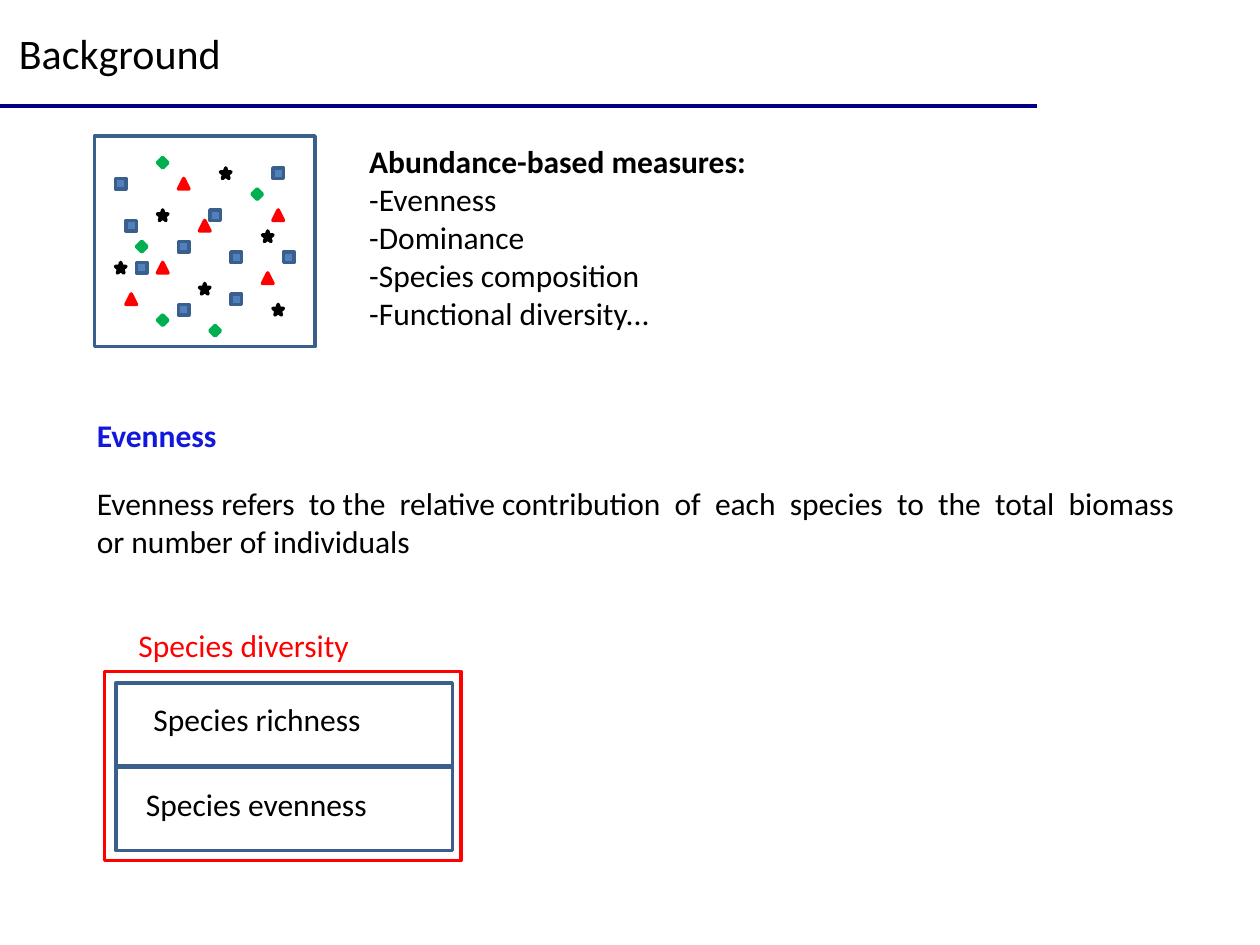
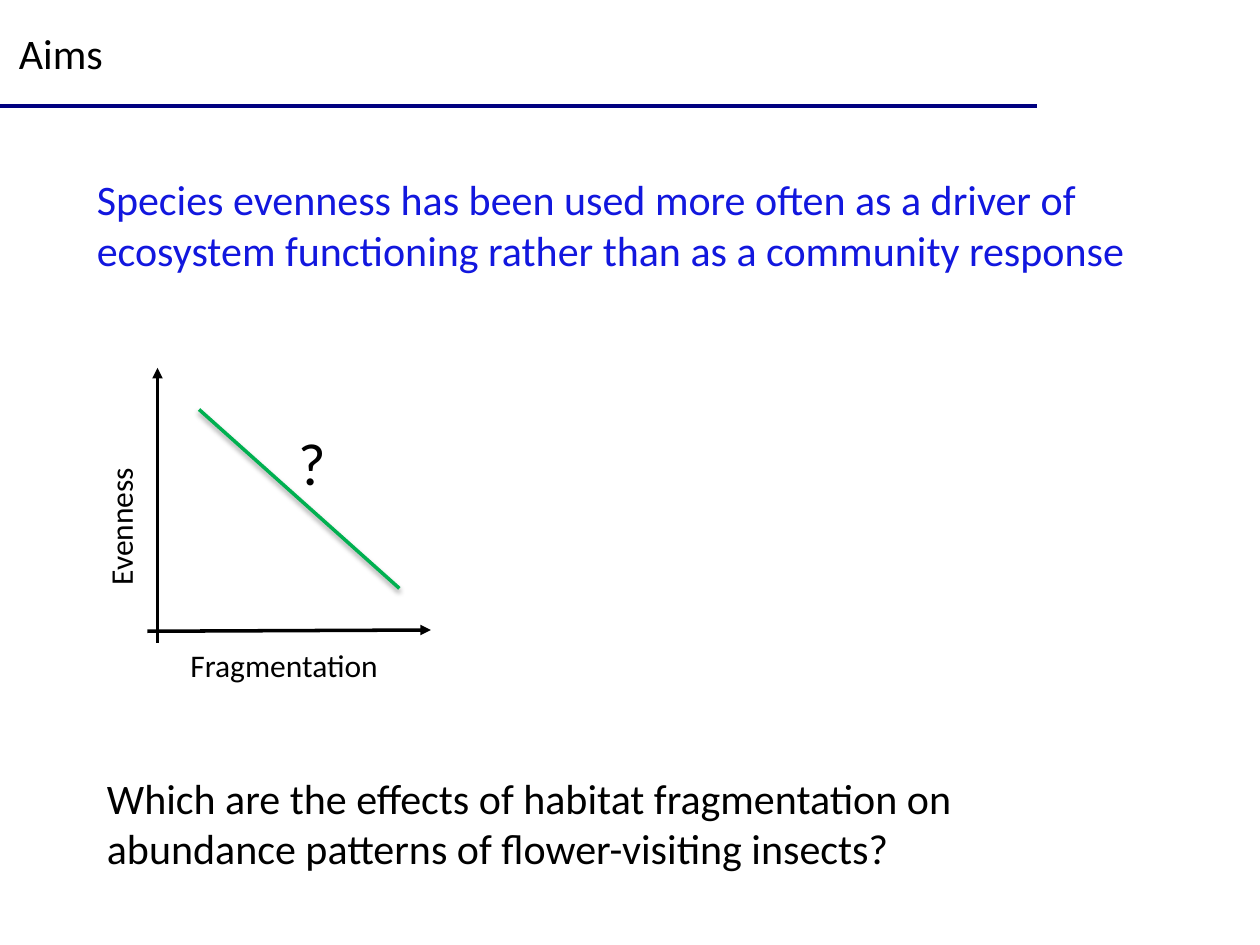
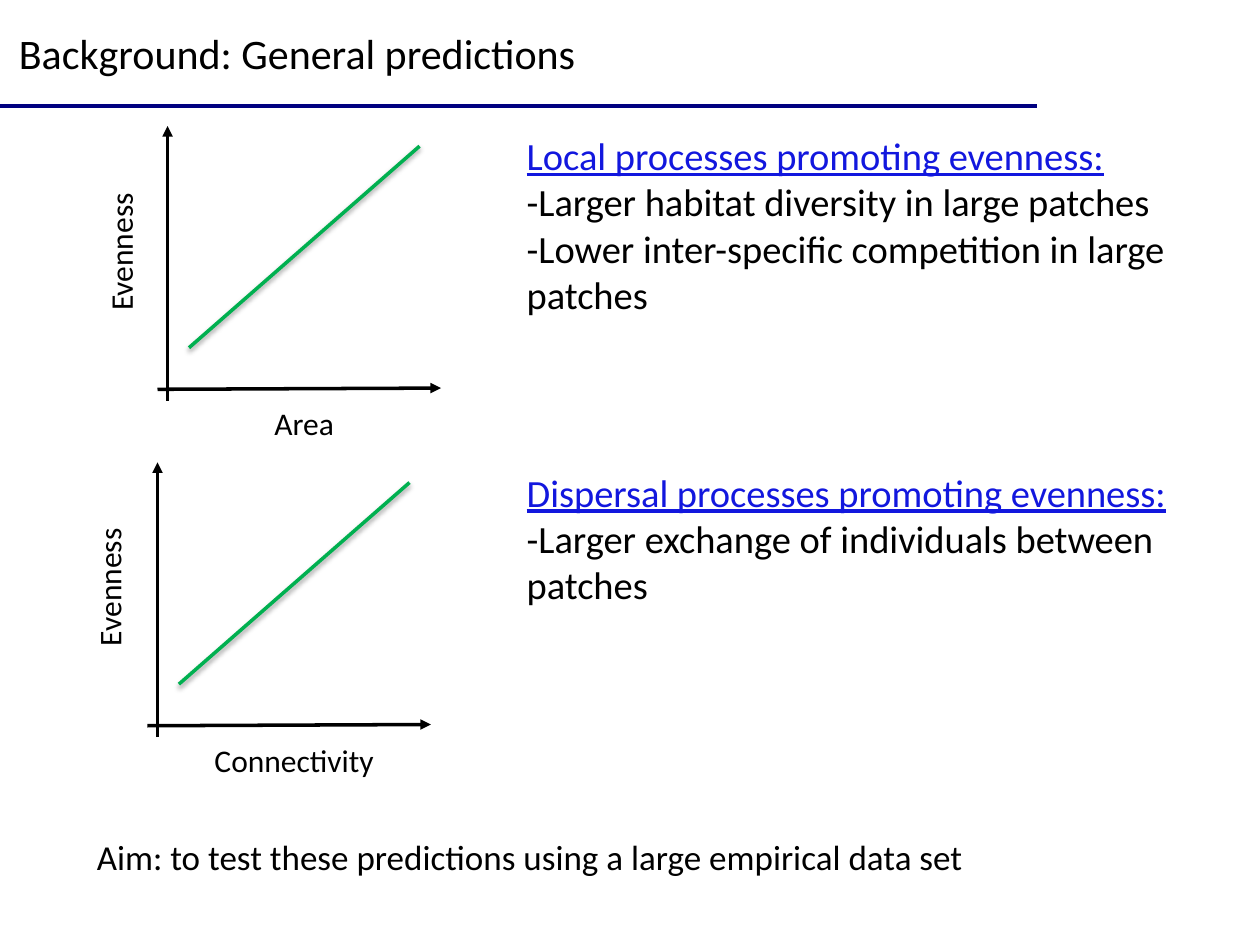
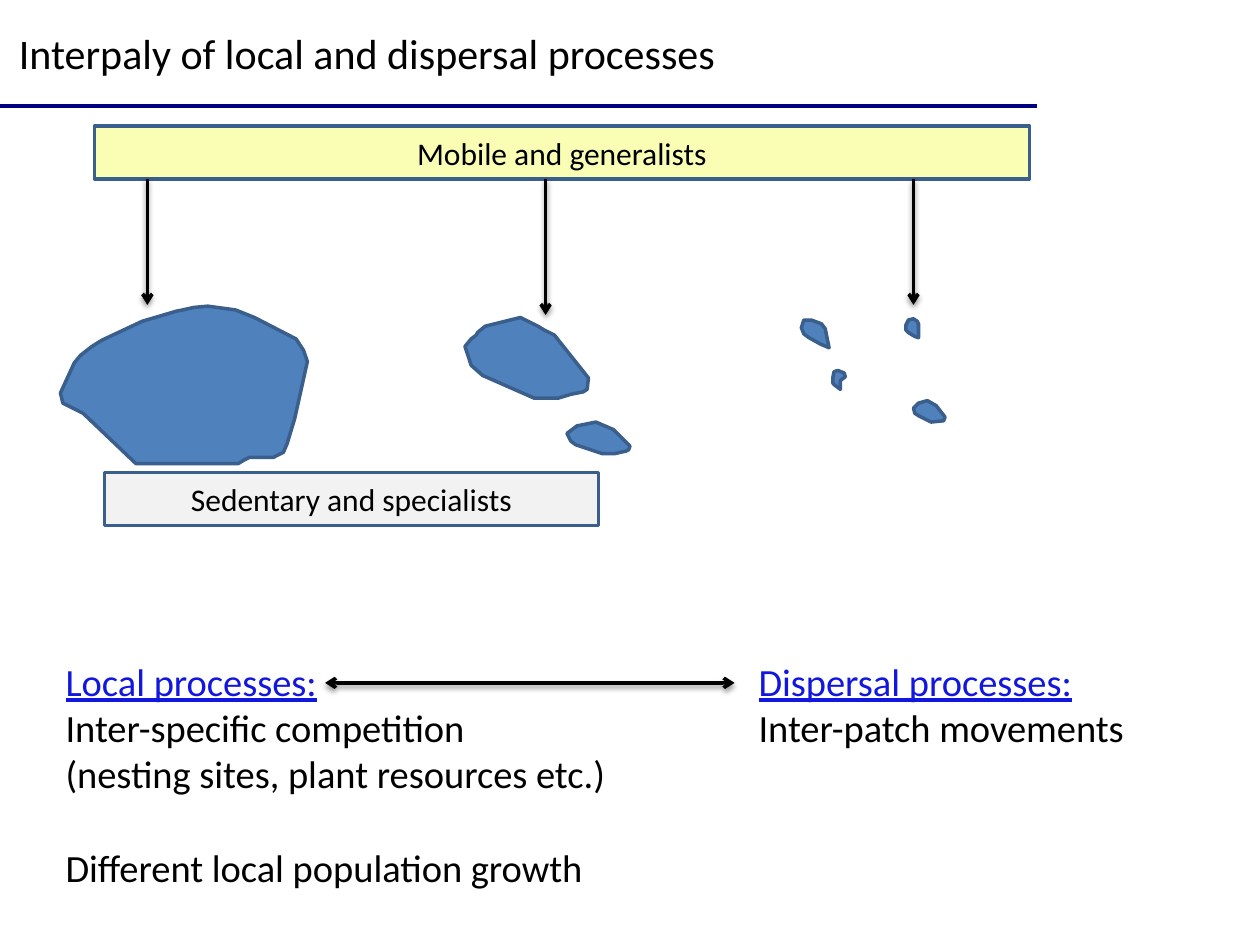
from lxml import etree
from pptx import Presentation
from pptx.dml.color import RGBColor
from pptx.enum.shapes import MSO_CONNECTOR as Link, MSO_SHAPE as Form
from pptx.enum.text import MSO_ANCHOR as Anchor, MSO_AUTO_SIZE as Fit, PP_ALIGN as Align
from pptx.oxml.ns import qn
from pptx.util import Inches, Pt

BLACK, WHITE, NAVY, INK = "000000", "FFFFFF", "000080", "1217DE"
RED, GREEN, BLUE, EDGE = "FF0000", "00B050", "4F81BD", "3A5F8C"
HEAD = dict(hue=INK, under=True)
rgb = RGBColor.from_string


def write(shape, at, text, size=18, hue=BLACK, bold=False, under=False,
          align=Align.LEFT, anchor=Anchor.TOP, wrap=True, lead=None):
    """Place a shape and set its lines; lead restyles the first line."""
    shape.left, shape.top, shape.width, shape.height = map(Inches, at)
    frame = shape.text_frame
    frame.text = text
    frame.word_wrap, frame.auto_size = wrap, Fit.NONE
    frame.vertical_anchor = anchor
    for num, para in enumerate(frame.paragraphs):
        look = dict(hue=hue, bold=bold, under=under)
        if num == 0:
            look.update(lead or {})
        para.alignment = align
        para.space_before = Pt(0)
        if shape.is_placeholder:
            props = para._p.get_or_add_pPr()
            props.set("marL", "0")
            props.set("indent", "0")
            etree.SubElement(props, qn("a:buNone"))
        font = para.runs[0].font
        font.name, font.size = "Calibri", Pt(size)
        font.bold, font.underline = look["bold"], look["under"]
        font.color.rgb = rgb(look["hue"])
    return shape


def paint(shape, line, fill=None, head=None, tail=None, shade=False):
    """Set line, fill, arrowheads and shadow of a shape or connector."""
    shape.line.color.rgb, shape.line.width = rgb(line), Pt(2)
    if fill:
        shape.fill.solid()
        shape.fill.fore_color.rgb = rgb(fill)
    elif hasattr(shape, "fill"):
        shape.fill.background()
    stroke = shape.line._get_or_add_ln()
    for tag, kind in (("a:headEnd", head), ("a:tailEnd", tail)):
        if kind:
            etree.SubElement(stroke, qn(tag), type=kind)
    effects = etree.SubElement(shape._element.spPr, qn("a:effectLst"))
    if shade:
        cast = etree.SubElement(effects, qn("a:outerShdw"), blurRad=str(Pt(3.1)),
                                dist=str(Pt(1.6)), dir="5400000", rotWithShape="0")
        tone = etree.SubElement(cast, qn("a:srgbClr"), val=BLACK)
        etree.SubElement(tone, qn("a:alpha"), val="38000")


deck = Presentation()
deck.slide_width, deck.slide_height = Inches(10), Inches(7.5)

# Slides with title and rule: title, title width, layout number
pages = []
for title, width, layout in (
    ("Background", 1.82, 1),
    ("Aims", 0.87, 5),
    ("Background: General predictions", 4.66, 3),
    ("Interpaly of local and dispersal processes", 5.78, 3),
):
    page = deck.slides.add_slide(deck.slide_layouts[layout])
    write(page.shapes.title, (0.05, 0.17, width, 0.5), title, size=24, wrap=False)
    rule = page.shapes.add_connector(Link.STRAIGHT, 0, Inches(0.84), Inches(8.23), Inches(0.84))
    paint(rule, NAVY)
    pages.append(page)
first, second, third, fourth = pages

# Slide 1: sample plot, marks on a grid of twelfths of an inch
shapes = first.shapes
plot = shapes.add_shape(Form.RECTANGLE, *map(Inches, (0.75, 1.08, 1.75, 1.67)))
paint(plot, EDGE)
for form, fill, line, spots in (
    (Form.RECTANGLE, BLUE, EDGE, ((11, 17), (13, 25), (12, 21), (20, 20), (22, 28),
                                  (22, 24), (26, 16), (27, 24), (17, 29), (17, 23))),
    (Form.ISOSCELES_TRIANGLE, RED, RED, ((17, 17), (19, 21), (12, 28),
                                         (26, 20), (15, 25), (25, 26))),
    (Form.STAR_5_POINT, BLACK, BLACK, ((26, 29), (19, 27), (21, 16),
                                       (11, 25), (25, 22), (15, 20))),
    (Form.DIAMOND, GREEN, GREEN, ((15, 15), (15, 30), (24, 18), (13, 23), (20, 31))),
):
    for col, row in spots:
        mark = shapes.add_shape(form, *(Inches(n / 12) for n in (col, row, 1, 1)))
        paint(mark, line, fill)

# Slide 1: measures, definition and nested boxes
write(first.placeholders[1], (2.83, 1.08, 3.21, 1.62),
      "Abundance-based measures:\n-Evenness\n-Dominance\n-Species composition\n"
      "-Functional diversity...", wrap=False, lead=dict(bold=True))
for at, text, look in (
    ((0.67, 3.25, 1.16, 0.4), "Evenness", dict(hue=INK, bold=True, wrap=False)),
    ((0.67, 3.79, 9, 0.71), "Evenness refers  to the  relative contribution  of  each  species"
     "  to  the  total  biomass  or number of individuals", {}),
    ((1, 4.92, 1.89, 0.4), "Species diversity", dict(hue=RED, wrap=False)),
    ((1.12, 5.51, 1.87, 0.4), "Species richness", dict(wrap=False)),
    ((1.06, 6.18, 1.98, 0.4), "Species evenness", dict(wrap=False)),
):
    write(shapes.add_textbox(0, 0, 0, 0), at, text, **look)
for at, line in (((0.92, 5.42, 2.67, 0.67), EDGE), ((0.92, 6.08, 2.67, 0.67), EDGE),
                 ((0.83, 5.33, 2.83, 1.5), RED)):
    paint(shapes.add_shape(Form.RECTANGLE, *map(Inches, at)), line)

# Slides 2 and 3: graphs, placed from the tip of the upright axis
down, rise = (0.33, 0.33, 1.92, 1.75), (0.17, 1.76, 2, 0.16)
for page, left, top, trend, name, inset, width, side, align in (
    (second, 1.25, 2.92, down, "Fragmentation", -0.08, 2.17, (0.04, 3.63), Align.LEFT),
    (third, 1.33, 1, rise, "Area", 0.17, 1.83, (0.04, 1.8), Align.CENTER),
    (third, 1.25, 3.67, rise, "Connectivity", 0.17, 1.83, (-0.05, 4.46), Align.CENTER),
):
    for (x1, y1, x2, y2), hue, tip in (
        ((0, 2.18, 0, 0), BLACK, "triangle"),
        ((-0.08, 2.09, 2.17, 2.08), BLACK, "triangle"),
        (trend, GREEN, None),
    ):
        ends = map(Inches, (left + x1, top + y1, left + x2, top + y2))
        link = page.shapes.add_connector(Link.STRAIGHT, *ends)
        paint(link, hue, tail=tip, shade=hue == GREEN)
    write(page.shapes.add_textbox(0, 0, 0, 0), (left + inset, top + 2.16, width, 0.4),
          name, align=Align.CENTER)
    label = write(page.shapes.add_textbox(0, 0, 0, 0), (*side, 1.83, 0.4),
                  "Evenness", align=align)
    label.rotation = 270

# Slides 2 and 3: statements
for page, at, text, look in (
    (second, (0.67, 1.33, 9, 3.74), "Species evenness has been used more often as a driver of "
     "ecosystem functioning rather than as a community response", dict(size=24, hue=INK)),
    (second, (0.75, 6.08, 8.25, 0.91), "Which are the effects of habitat fragmentation on "
     "abundance patterns of flower-visiting insects?", dict(size=24)),
    (second, (2.27, 3.33, 0.42, 0.67), "?", dict(size=34, align=Align.CENTER, wrap=False)),
    (third, (0.67, 6.58, 9.33, 0.44),
     "Aim: to test these predictions using a large empirical data set", dict(size=20)),
):
    write(page.shapes.add_textbox(0, 0, 0, 0), at, text, **look)

# Slides 3 and 4: lists of processes
for page, num, at, text in (
    (third, 1, (4.08, 1, 5.67, 1.58), "Local processes promoting evenness:\n"
     "-Larger habitat diversity in large patches\n"
     "-Lower inter-specific competition in large patches"),
    (third, 2, (4.08, 3.67, 5.92, 1.21), "Dispersal processes promoting evenness:\n"
     "-Larger exchange of individuals between patches"),
    (fourth, 1, (0.42, 5.17, 4.58, 1.95), "Local processes:\nInter-specific competition\n"
     "(nesting sites, plant resources etc.)\nDifferent local population growth"),
    (fourth, 2, (5.92, 5.17, 3.33, 0.84), "Dispersal processes:\nInter-patch movements"),
):
    write(page.placeholders[num], at, text, size=22, lead=HEAD)
fourth.placeholders[1].text_frame.paragraphs[-1].space_before = Pt(27)

# Slide 4: habitat patches, outlines in hundredths of an inch
shapes = fourth.shapes
for dots in (
    ((66, 328), (108, 368), (189, 368), (194, 365), (198, 363), (208, 363), (217, 363),
     (225, 359), (228, 352), (234, 332), (244, 287), (241, 278), (235, 269), (202, 252),
     (187, 246), (165, 243), (154, 244), (145, 246), (140, 247), (130, 250), (113, 255),
     (81, 270), (73, 275), (64, 282), (59, 288), (48, 312), (50, 320)),
    ((413, 252), (421, 256), (427, 259), (432, 262), (440, 266), (467, 300), (466, 309),
     (463, 311), (453, 313), (443, 316), (439, 316), (424, 316), (383, 298), (374, 290),
     (369, 275), (374, 269), (378, 266), (379, 264), (385, 259)),
    ((658, 276), (655, 261), (652, 257), (644, 254), (638, 254), (636, 260), (638, 265),
     (642, 268), (651, 273)),
    ((667, 302), (671, 299), (670, 296), (665, 294), (662, 295), (661, 300), (661, 304),
     (663, 306), (667, 309)),
    ((736, 318), (743, 322), (750, 331), (749, 334), (739, 335), (729, 330), (726, 328),
     (725, 324), (729, 320)),
    ((473, 335), (480, 338), (487, 341), (500, 354), (499, 357), (497, 358), (488, 360),
     (478, 360), (457, 353), (453, 350), (450, 344), (454, 341), (458, 338)),
    ((729, 268), (729, 257), (728, 255), (725, 253), (721, 254), (719, 258), (719, 262),
     (721, 264), (726, 267)),
):
    path = shapes.build_freeform(*dots[0], scale=Inches(0.01))
    path.add_line_segments(dots[1:], close=True)
    paint(path.convert_to_shape(), EDGE, BLUE)

# Slide 4: species groups and arrows
for at, text, fill in (
    ((0.83, 3.75, 3.92, 0.42), "Sedentary and specialists", "F2F2F2"),
    ((0.75, 1, 7.42, 0.42), "Mobile and generalists", "F9FEB4"),
):
    group = shapes.add_shape(Form.RECTANGLE, 0, 0, 0, 0)
    write(group, at, text, align=Align.CENTER, anchor=Anchor.MIDDLE)
    paint(group, EDGE, fill)
for ends, head in (
    ((5.83, 5.42, 2.58, 5.42), "arrow"),
    ((7.25, 1.42, 7.25, 2.42), None),
    ((1.17, 1.42, 1.17, 2.42), None),
    ((4.33, 1.42, 4.33, 2.5), None),
):
    arrow = shapes.add_connector(Link.STRAIGHT, *map(Inches, ends))
    paint(arrow, BLACK, head=head, tail="arrow", shade=True)

deck.save("out.pptx")
